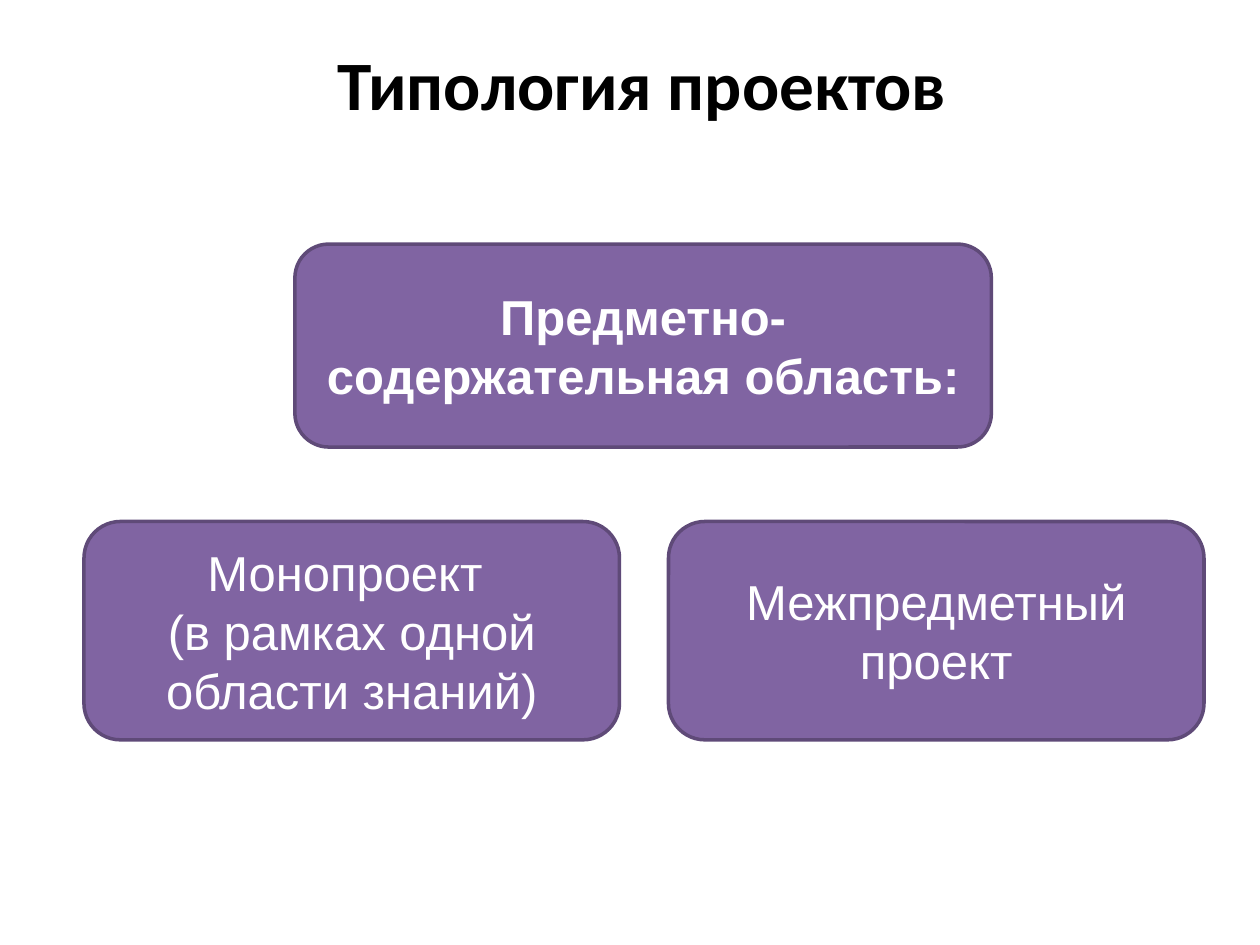
import pptx
import pptx.util
import pptx.dml.color
import pptx.enum.shapes
import pptx.enum.text

Pt = pptx.util.Pt

TITLE = "Типология проектов"
AREA = ["Предметно-содержательная область:"]
KINDS = [
    ["Монопроект ", "(в рамках одной области знаний)"],
    ["Межпредметный проект"],
]

WIDTH, HEIGHT = 720, 540
TITLE_BOX = (82, 21, 570, 52.5)
AREA_BOX = (168.5, 139.5, 398, 116)
KIND_LEFT, KIND_TOP, KIND_W, KIND_H, KIND_GAP = 48, 298, 306, 124.75, 28

TITLE_FONT = {"name": "Calibri", "size": Pt(39.6), "bold": True}
AREA_FONT = {"name": "Arial", "size": Pt(28), "bold": True}
KIND_FONT = {"name": "Arial", "size": Pt(28), "bold": False}


def rgb(value):
    return pptx.dml.color.RGBColor.from_string(value)


def write(sp, lines, fmt, color):
    tf = sp.text_frame
    tf.word_wrap = True
    tf.vertical_anchor = pptx.enum.text.MSO_ANCHOR.MIDDLE
    for i, line in enumerate(lines):
        p = tf.paragraphs[0] if i == 0 else tf.add_paragraph()
        p.alignment = pptx.enum.text.PP_ALIGN.CENTER
        r = p.add_run()
        r.text = line
        for key, value in fmt.items():
            setattr(r.font, key, value)
        r.font.color.rgb = rgb(color)


def add_card(s, box, lines, fmt):
    sp = s.shapes.add_shape(
        pptx.enum.shapes.MSO_SHAPE.ROUNDED_RECTANGLE, *map(Pt, box))
    sp.shadow.inherit = False
    sp.fill.solid()
    sp.fill.fore_color.rgb = rgb("8064A2")
    sp.line.color.rgb = rgb("5F4A78")
    sp.line.width = Pt(2)
    write(sp, lines, fmt, "FFFFFF")


prs = pptx.Presentation()
prs.slide_width, prs.slide_height = Pt(WIDTH), Pt(HEIGHT)
s = prs.slides.add_slide(prs.slide_layouts[6])

add_card(s, AREA_BOX, AREA, AREA_FONT)
for i, lines in enumerate(KINDS):
    left = KIND_LEFT + i * (KIND_W + KIND_GAP)
    add_card(s, (left, KIND_TOP, KIND_W, KIND_H), lines, KIND_FONT)
write(s.shapes.add_textbox(*map(Pt, TITLE_BOX)), [TITLE], TITLE_FONT, "000000")

prs.save("out.pptx")
